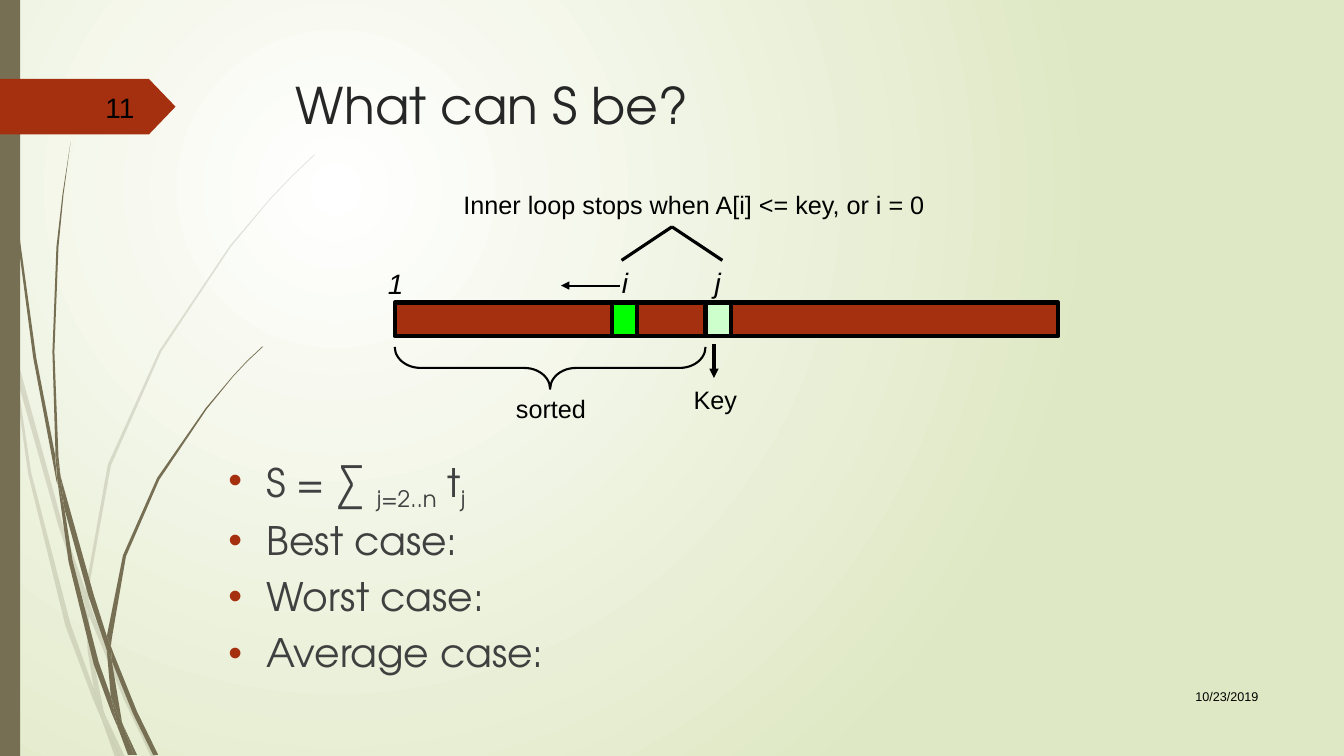
from lxml.etree import SubElement
from pptx import Presentation
from pptx.dml.color import RGBColor
from pptx.enum.shapes import MSO_CONNECTOR, MSO_SHAPE
from pptx.enum.text import MSO_ANCHOR, PP_ALIGN
from pptx.oxml.ns import qn
from pptx.util import Inches, Pt

COLS, ROWS = 160, 90  # twelve grid units to the inch
UNIT = Inches(1) // 12
FINE = Inches(1) // 100  # finer grid for the grass outlines
COLORS = {"white": "FFFFFF", "pale": "DFE8C4", "olive": "766F54", "rust": "A53010",
          "black": "000000", "title": "262626", "body": "404040",
          "mint": "CCFFCC", "green": "00FF00"}
HEADING, PLAIN = "TeX Gyre Adventor", "Arial"
STYLES = {
    "title": ({"name": HEADING, "size": Pt(36)}, "title"),
    "body": ({"name": HEADING, "size": Pt(28)}, "body"),
    "number": ({"name": PLAIN, "size": Pt(20)}, "black"),
    "index": ({"name": PLAIN, "size": Pt(20), "italic": True}, "black"),
    "label": ({"name": PLAIN, "size": Pt(18)}, "black"),
    "date": ({"name": PLAIN, "size": Pt(9)}, "black"),
}

# Grass: closed outlines on the fine grid
PALE_GRASS = [
    [(11, 350), (9, 322), (0, 282), (0, 299), (10, 344)],
    [(58, 522), (84, 599), (85, 586), (62, 520), (14, 345), (17, 376)],
    [(92, 607), (88, 596), (88, 610), (123, 694), (150, 751), (155, 751), (127, 692)],
    [(119, 751), (124, 751), (105, 711)],
    [(93, 683), (70, 619), (31, 469), (17, 376), (11, 350), (28, 470), (65, 621), (92, 693),
     (101, 714), (99, 707)],
    [(84, 599), (87, 646), (93, 683), (96, 692), (105, 711), (103, 706), (91, 646), (88, 610)],
    [(88, 584), (110, 462), (160, 349), (229, 245), (268, 198), (290, 175), (312, 154),
     (312, 153), (289, 175), (268, 197), (228, 244), (158, 348), (107, 461), (85, 584),
     (85, 586), (88, 596)],
    [(101, 714), (114, 751), (119, 751)],
    [(88, 608), (88, 610), (88, 596), (85, 586), (84, 599)],
    [(96, 692), (93, 683), (99, 707), (101, 714), (119, 751), (105, 711)],
]
DARK_GRASS = [
    [(7, 110), (17, 233), (33, 355), (56, 477), (57, 481), (55, 457), (55, 453), (36, 355),
     (19, 232), (8, 109), (5, 48), (4, 0), (3, 0), (4, 48)],
    [(88, 592), (106, 645), (106, 631), (93, 590), (60, 472), (64, 505)],
    [(113, 649), (110, 641), (111, 656), (132, 708), (152, 749), (157, 749), (136, 706)],
    [(110, 691), (98, 657), (72, 556), (64, 505), (57, 477), (68, 557), (93, 659), (111, 708),
     (117, 722), (116, 717)],
    [(60, 472), (58, 453), (54, 349), (58, 245), (63, 193), (70, 141), (62, 193), (56, 245),
     (52, 349), (55, 449)],
    [(133, 749), (136, 749), (122, 719)],
    [(57, 477), (64, 505), (60, 472), (55, 449), (55, 453)],
    [(111, 633), (125, 552), (158, 476), (205, 406), (231, 374), (245, 359), (261, 344),
     (260, 344), (245, 358), (231, 373), (204, 405), (156, 474), (122, 551), (106, 631),
     (110, 641)],
    [(117, 722), (127, 749), (131, 749)],
    [(106, 645), (110, 691), (116, 706), (122, 719), (121, 716), (111, 656), (109, 651)],
    [(106, 645), (109, 651), (111, 656), (110, 641), (106, 631)],
    [(116, 706), (110, 691), (116, 717), (117, 722), (130, 749), (133, 749), (122, 719)],
]


def grid(*values):
    return [round(v * UNIT) for v in values]


def rgb(color):
    return RGBColor.from_string(COLORS[color])


class SlideBuilder:
    def __init__(self, prs):
        self.s = prs.slides.add_slide(prs.slide_layouts[6])

    def background(self, inner, outer):
        fill = self.s.background.fill
        fill.gradient()
        for stop, color in zip(fill.gradient_stops, (inner, outer)):
            stop.color.rgb = rgb(color)
        grad = self.s.element.find(".//" + qn("a:gradFill"))
        grad.remove(grad.find(qn("a:lin")))
        radial = SubElement(grad, qn("a:path"), {"path": "circle"})
        SubElement(radial, qn("a:fillToRect"),
                   {"l": "50000", "t": "50000", "r": "100000", "b": "100000"})

    def paint(self, sp, fill, line=None):
        sp.shadow.inherit = False
        if fill:
            sp.fill.solid()
            sp.fill.fore_color.rgb = rgb(fill)
        else:
            sp.fill.background()
        if line:
            sp.line.color.rgb = rgb("black")
            sp.line.width = Pt(line)
        else:
            sp.line.fill.background()
        return sp

    def shape(self, kind, box, fill=None, line=None, adjust=(), rotation=0):
        sp = self.s.shapes.add_shape(kind, *grid(*box))
        for n, value in enumerate(adjust):
            sp.adjustments[n] = value
        sp.rotation = rotation
        self.paint(sp, fill, line)

    def grass(self, outlines, color, opacity=100):
        for start, *rest in outlines:
            builder = self.s.shapes.build_freeform(*start, scale=FINE)
            builder.add_line_segments(rest, close=True)
            sp = self.paint(builder.convert_to_shape(), color)
            if opacity < 100:
                clr = sp.element.spPr.find(".//" + qn("a:srgbClr"))
                SubElement(clr, qn("a:alpha"), {"val": str(opacity * 1000)})

    def line(self, start, end, width, arrow=False):
        cxn = self.s.shapes.add_connector(MSO_CONNECTOR.STRAIGHT, *grid(*start, *end))
        cxn.line.color.rgb = rgb("black")
        cxn.line.width = Pt(width)
        if arrow:
            ln = cxn.element.spPr.find(qn("a:ln"))
            SubElement(ln, qn("a:tailEnd"), {"type": "triangle"})
        SubElement(cxn.element.spPr, qn("a:effectLst"))

    def run(self, p, text, style, baseline=0):
        r = p.add_run()
        r.text = text
        values, color = STYLES[style]
        for name, value in values.items():
            setattr(r.font, name, value)
        r.font.color.rgb = rgb(color)
        if baseline:
            r._r.get_or_add_rPr().set("baseline", str(baseline * 1000))

    def frame(self, box, wrap=True, anchor=MSO_ANCHOR.TOP):
        tf = self.s.shapes.add_textbox(*grid(*box)).text_frame
        tf.word_wrap, tf.vertical_anchor = wrap, anchor
        return tf

    def text(self, text, box, style, align=PP_ALIGN.LEFT, **frame):
        p = self.frame(box, **frame).paragraphs[0]
        p.alignment = align
        self.run(p, text, style)

    def bullets(self, items, box):
        tf = self.frame(box)
        for n, item in enumerate(items):
            p = tf.add_paragraph() if n else tf.paragraphs[0]
            p.line_spacing, p.space_before = 0.9, Pt(10)
            pPr = p._p.get_or_add_pPr()
            pPr.set("marL", str(Inches(0.38)))
            pPr.set("indent", str(-Inches(0.38)))
            SubElement(SubElement(pPr, qn("a:buClr")), qn("a:srgbClr"), {"val": COLORS["rust"]})
            SubElement(pPr, qn("a:buFont"), {"typeface": PLAIN})
            SubElement(pPr, qn("a:buChar"), {"char": "•"})
            for text, baseline in item:
                self.run(p, text, "body", baseline)


def main():
    prs = Presentation()
    prs.slide_width, prs.slide_height = grid(COLS, ROWS)
    s = SlideBuilder(prs)

    # Backdrop
    s.background("white", "pale")
    s.grass(PALE_GRASS, "olive", opacity=20)
    s.grass(DARK_GRASS, "olive")
    s.shape(MSO_SHAPE.RECTANGLE, (0, 0, 2.4, ROWS), "olive")
    s.shape(MSO_SHAPE.PENTAGON, (0, 9.4, 20.9, 6.6), "rust", adjust=[0.48])

    # Title, date and slide number
    right = {"align": PP_ALIGN.RIGHT, "anchor": MSO_ANCHOR.MIDDLE}
    s.text("10/23/2019", (136, 80.5, 15, 4.9), "date", **right)
    s.text("11", (7, 10.4, 10.2, 4.8), "number", **right)
    s.text("What can S be?", (34.05, 8.2, 117, 16.8), "title")

    # Cases
    s.bullets([[("S = ∑ ", 0), ("j=2..n", -25), (" t", 0), ("j", -25)],
               [("Best case:", 0)], [("Worst case:", 0)], [("Average case:", 0)]],
              (26, 54.05, 108, 26.4))

    # Array with the cells i and j
    for left, width, color in [(47, 79, "rust"), (84, 3, "mint"), (72.85, 3, "green")]:
        s.shape(MSO_SHAPE.RECTANGLE, (left, 36, width, 4), color, line=3)
    for text, left, top, width in [("1", 45, 31.1, 4.3), ("i", 72.85, 31, 3.1),
                                   ("j", 83.9, 31, 3.1)]:
        s.text(text, (left, top, width, 5.2), "index", wrap=False)

    # Sorted part, key and stop condition
    s.shape(MSO_SHAPE.LEFT_BRACE, (63, 25.3, 5, 37), line=1.5, adjust=[0.617, 0.5], rotation=270)
    s.text("sorted", (60.25, 46.2, 10.8, 4.8), "label", wrap=False)
    s.text("Key", (81.4, 45.2, 7.6, 4.8), "label", wrap=False)
    s.text("Inner loop stops when A[i] <= key, or i = 0", (54, 22, 59, 4.8), "label")
    s.line((73.8, 34), (66.8, 34), 1.5, arrow=True)
    s.line((85, 41), (85, 45), 2.25, arrow=True)
    for foot in (74, 86):
        s.line((foot, 31), (80, 27), 2.25)

    prs.save("out.pptx")


if __name__ == "__main__":
    main()
